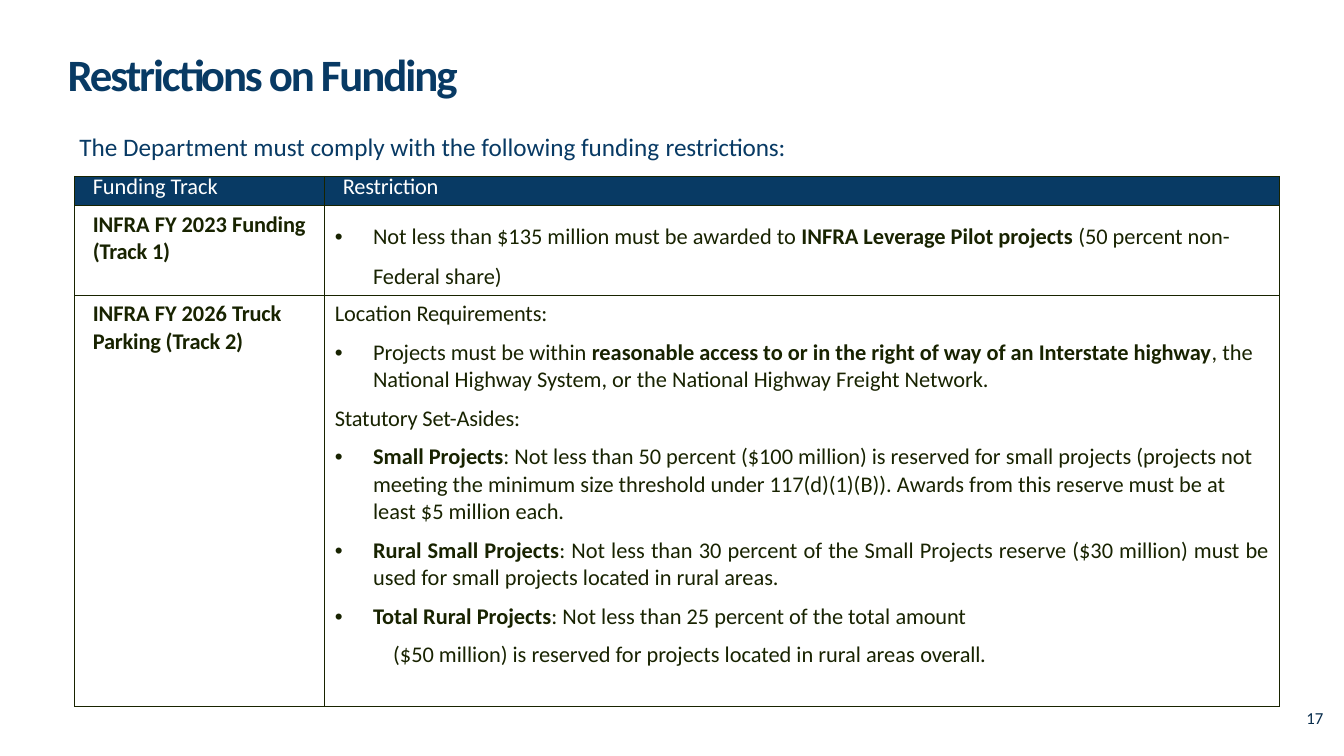
import pptx
import pptx.dml.color
import pptx.enum.text
import pptx.oxml.ns
import pptx.util
import lxml.etree

NAVY = pptx.dml.color.RGBColor(0x08, 0x3A, 0x64)
DEEP_NAVY = pptx.dml.color.RGBColor(0x06, 0x2B, 0x4B)
INK = pptx.dml.color.RGBColor(0x18, 0x23, 0x00)
WHITE = pptx.dml.color.RGBColor(0xFF, 0xFF, 0xFF)

ALIGN = pptx.enum.text.PP_ALIGN
ANCHOR = pptx.enum.text.MSO_ANCHOR
AUTO_SIZE = pptx.enum.text.MSO_AUTO_SIZE
TIGHT = -10


def px(length):
    return pptx.util.Emu(length * 9144)


def add_child(parent, tag, **attributes):
    child = lxml.etree.SubElement(parent, pptx.oxml.ns.qn(tag))
    for name, value in attributes.items():
        child.set(name, str(value))
    return child


def plain(text, spacing=0):
    return text, False, spacing


def bold(text, spacing=0):
    return text, True, spacing


def label(*runs, **options):
    return dict(runs=runs, left=8, **options)


def item(*runs, **options):
    return dict(runs=runs, left=38, hanging=38, bullet=True, **options)


class SlideBuilder:
    font = "Calibri"

    def __init__(self, presentation):
        self.slide = presentation.slides.add_slide(presentation.slide_layouts[6])

    def paragraph(self, paragraph, runs, size, color, left=0, hanging=0, bullet=False,
                  line=None, before=None, after=None, align=ALIGN.LEFT):
        properties = paragraph._p.get_or_add_pPr()
        properties.set("marL", str(px(left)))
        properties.set("indent", str(px(-hanging)))
        if bullet:
            add_child(properties, "a:buFont", typeface="Arial")
            add_child(properties, "a:buChar", char="•")
            tabs = add_child(properties, "a:tabLst")
            add_child(tabs, "a:tab", pos=px(58), algn="l")
        paragraph.alignment = align
        paragraph.line_spacing = line
        paragraph.space_before = before
        paragraph.space_after = after
        for text, is_bold, spacing in runs:
            run = paragraph.add_run()
            run.text = text
            run.font.name = self.font
            run.font.size = pptx.util.Pt(size)
            run.font.bold = is_bold
            run.font.color.rgb = color
            if spacing:
                run._r.get_or_add_rPr().set("spc", str(spacing))

    def fill_text(self, frame, paragraphs, size, color):
        for index, options in enumerate(paragraphs):
            paragraph = frame.add_paragraph() if index else frame.paragraphs[0]
            self.paragraph(paragraph, size=size, color=color, **options)

    def text(self, left, top, width, height, paragraphs, size, color):
        shape = self.slide.shapes.add_textbox(px(left), px(top), px(width), px(height))
        frame = shape.text_frame
        frame.word_wrap = True
        self.fill_text(frame, paragraphs, size, color)
        return frame

    def border(self, cell):
        properties = cell._tc.get_or_add_tcPr()
        for position, side in enumerate(("a:lnL", "a:lnR", "a:lnT", "a:lnB")):
            line = add_child(properties, side, w=pptx.util.Pt(1))
            add_child(add_child(line, "a:solidFill"), "a:srgbClr", val=INK)
            properties.insert(position, line)

    def table(self, left, top, widths, heights, rows, size):
        table = self.slide.shapes.add_table(
            len(rows), len(widths), px(left), px(top), px(sum(widths)), px(sum(heights))).table
        table.horz_banding = False
        table.first_row = False
        for column, width in zip(table.columns, widths):
            column.width = px(width)
        for index, (height, contents) in enumerate(zip(heights, rows)):
            table.rows[index].height = px(height)
            for cell, paragraphs in zip(table.rows[index].cells, contents):
                if index == 0:
                    cell.fill.solid()
                    cell.fill.fore_color.rgb = NAVY
                else:
                    cell.fill.background()
                self.border(cell)
                self.fill_text(cell.text_frame, paragraphs, size, INK if index else WHITE)


def main():
    presentation = pptx.Presentation()
    presentation.slide_width = px(1333)
    presentation.slide_height = px(750)
    builder = SlideBuilder(presentation)

    header_line = pptx.util.Pt(13.8)
    gap = pptx.util.Pt(8)
    header = [
        [label(plain("Funding Track"), line=header_line)],
        [label(plain("Restriction", TIGHT), line=header_line)],
    ]
    track_one = [
        [label(bold("INFRA FY 2023 "), bold("Funding (Track 1)", TIGHT))],
        [item(plain("Not less than $135 million must be awarded to "),
              bold("INFRA Leverage Pilot projects "),
              plain("(50 percent non-Federal share)"), line=1.45)],
    ]
    track_two = [
        [label(bold("INFRA FY 2026"), bold(" Truck", TIGHT)),
         label(bold("Parking (Track 2)", TIGHT))],
        [dict(runs=[plain("Location"), plain(" Requirements:", TIGHT)], after=gap),
         item(plain("Projects must be within "),
              bold("reasonable access to or in the right of way of an Interstate highway"),
              plain(", the National Highway System, or the National Highway Freight Network."),
              after=gap),
         dict(runs=[plain("Statutory Set-", TIGHT), plain("Asides:", TIGHT)], after=gap),
         item(bold("Small Projects"),
              plain(": Not less than 50 percent ($100 million) is reserved for small projects "
                    "(projects not meeting the minimum size threshold under 117(d)(1)(B)). "
                    "Awards from this reserve must be at least $5 million each."), after=gap),
         item(bold("Rural Small Projects"),
              plain(": Not less than 30 percent of the Small Projects reserve ($30 million) "
                    "must be used for small projects located in rural areas."),
              after=gap, align=ALIGN.JUSTIFY),
         item(bold("Total Rural Projects"),
              plain(": Not less than 25 percent of the total "), plain("amount", TIGHT),
              after=gap, align=ALIGN.JUSTIFY),
         dict(runs=[plain("($50 million) is reserved for projects located in rural areas "),
                    plain("overall.", TIGHT)], left=58, after=gap, align=ALIGN.JUSTIFY)],
    ]
    builder.table(74, 175, [248, 947], [26, 78, 408], [header, track_one, track_two], 16)

    builder.text(1286, 697, 47, 47, [dict(runs=[plain("17")])], 12, DEEP_NAVY)

    title = builder.text(67, 53, 1046, 47,
                         [dict(runs=[bold("Restrictions on Funding", -150)], line=0.9)], 32, NAVY)
    title.margin_left = title.margin_right = title.margin_top = title.margin_bottom = 0
    title.vertical_anchor = ANCHOR.MIDDLE

    introduction = builder.text(
        44, 125, 1196, 40,
        [dict(runs=[plain("The Department must comply with the following funding "),
                    plain("restrictions:", TIGHT)], left=25)], 18, NAVY)
    introduction.auto_size = AUTO_SIZE.SHAPE_TO_FIT_TEXT

    presentation.save("out.pptx")


if __name__ == "__main__":
    main()
